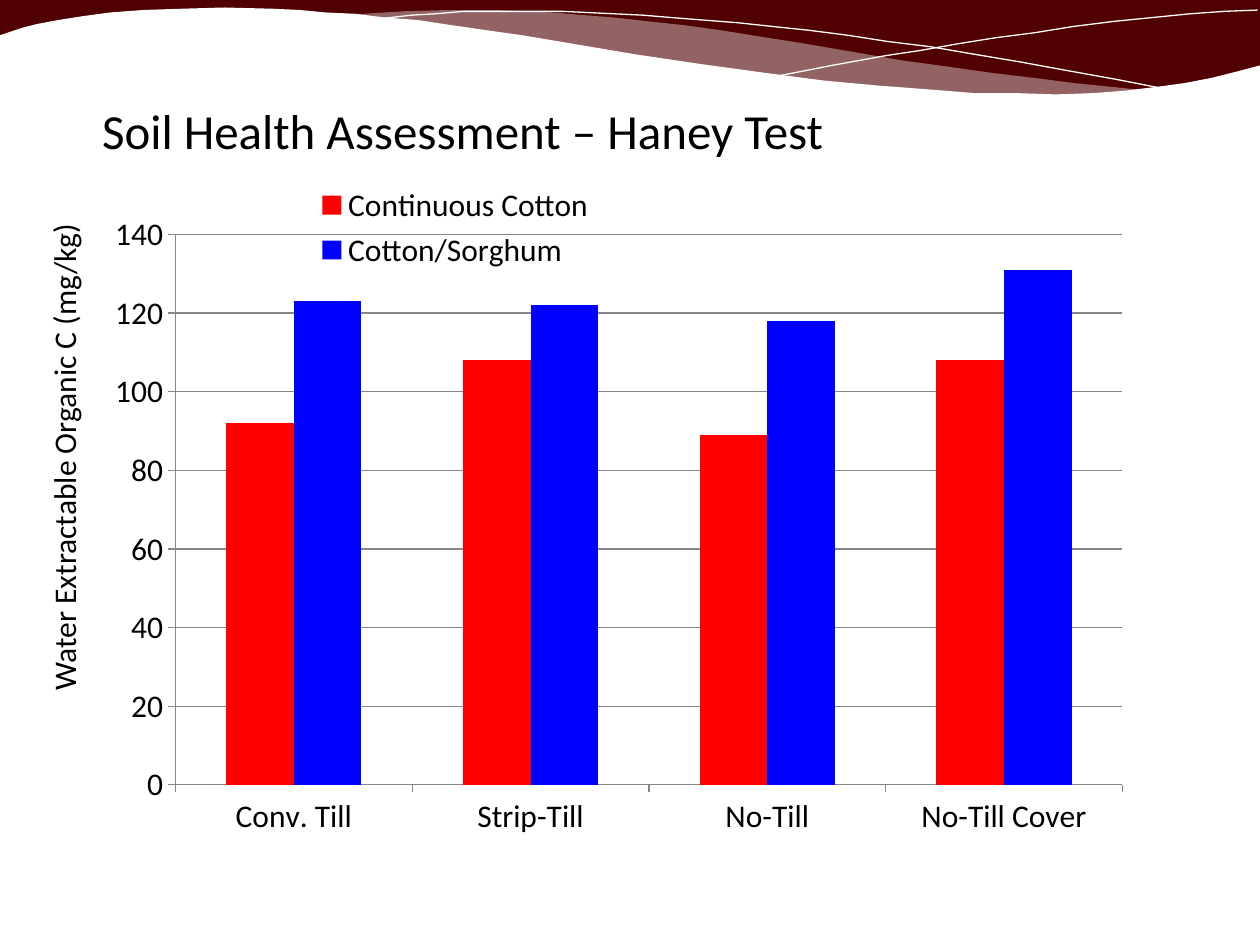
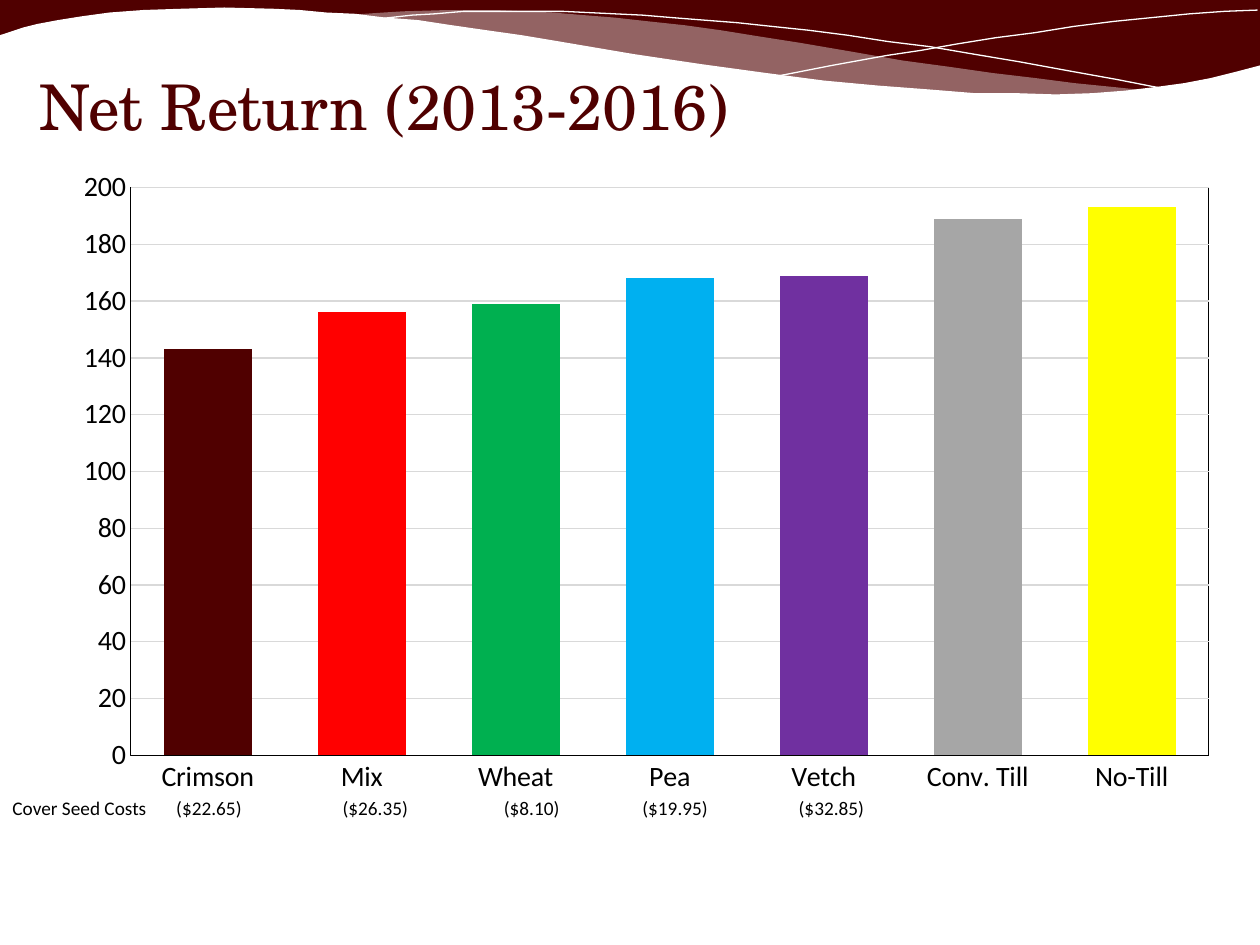
from lxml import etree
from pptx import Presentation
from pptx.chart.data import CategoryChartData
from pptx.dml.color import RGBColor
from pptx.enum.chart import XL_CHART_TYPE, XL_LEGEND_POSITION, XL_TICK_MARK
from pptx.enum.shapes import MSO_SHAPE
from pptx.enum.text import MSO_ANCHOR, PP_ALIGN
from pptx.oxml import parse_xml
from pptx.oxml.ns import nsdecls, qn
from pptx.util import Inches, Pt

CLUSTERED = XL_CHART_TYPE.COLUMN_CLUSTERED
LEGEND_RIGHT = XL_LEGEND_POSITION.RIGHT
TICK_NONE, TICK_OUT = XL_TICK_MARK.NONE, XL_TICK_MARK.OUTSIDE
RECTANGLE = MSO_SHAPE.RECTANGLE
TOP, MIDDLE = MSO_ANCHOR.TOP, MSO_ANCHOR.MIDDLE
LEFT = PP_ALIGN.LEFT

MAROON, WHITE, BLACK = "500000", "FFFFFF", "000000"
VEIL, AXIS_GREY, PALE_GREY = "F8F8F8", "868686", "D9D9D9"
BODY_FONT, SERIF_FONT = "Calibri", "TeX Gyre Schola"

VEIL_OUTLINE = [
    (9.12, .72), (8.83, .69), (8.53, .66), (8.22, .62), (7.88, .58), (7.53, .53),
    (7.16, .48), (6.76, .41), (6.35, .34), (6.03, .29), (5.72, .24), (5.43, .2),
    (5.15, .17), (4.88, .14), (4.63, .12), (4.39, .1), (4.16, .09), (3.94, .08),
    (3.54, .08), (3.2, .09), (3.04, .1), (2.89, .11), (2.76, .12), (3.14, .15),
    (3.34, .18), (3.55, .2), (3.77, .23), (4, .27), (4.23, .3), (4.47, .34),
    (4.9, .42), (5.31, .48), (5.69, .54), (6.06, .59), (6.41, .63), (6.73, .67),
    (7.04, .7), (7.33, .72), (7.6, .74), (7.86, .75), (8.1, .76), (8.54, .76),
    (8.75, .75), (8.94, .73)]
FALLING_LINE = [
    (3, .15), (3.09, .14), (3.27, .12), (3.45, .11), (3.68, .09), (4.12, .09),
    (4.47, .09), (4.88, .11), (5.1, .12), (5.34, .14), (5.59, .16), (5.85, .18),
    (6.13, .21), (6.42, .24), (6.73, .28), (7.05, .33), (7.38, .37), (7.73, .43),
    (8.09, .49), (8.47, .56), (8.86, .63), (9.27, .71)]
RISING_LINE = [
    (6.19, .6), (6.6, .52), (7.04, .44), (7.31, .4), (7.59, .35), (7.9, .3),
    (8.21, .26), (8.52, .21), (8.84, .17), (9.14, .14), (9.44, .11), (9.72, .09),
    (9.98, .08)]
WAVE_OUTLINE = [
    (10, .52), (9.81, .57), (9.61, .62), (9.4, .66), (9.18, .69), (8.93, .72),
    (8.67, .74), (8.38, .75), (8.07, .74), (7.74, .74), (7.37, .71), (6.97, .68),
    (6.54, .64), (6.08, .58), (5.57, .51), (5.03, .43), (4.44, .33), (4.14, .28),
    (3.86, .24), (3.58, .2), (3.32, .16), (3.06, .14), (2.82, .11), (2.59, .1),
    (2.38, .08), (2.17, .07), (1.78, .06), (1.44, .07), (1.14, .08), (.87, .1),
    (.65, .13), (.46, .16), (.3, .19), (.18, .22), (.06, .26), (0, .28),
    (0, 1.13), (10, 1.13)]


def rgb(color):
    return RGBColor.from_string(color)


def set_font(font, size, color=BLACK, name=BODY_FONT):
    font.size, font.name = Pt(size), name
    font.color.rgb = rgb(color)


def set_line(line, color, width):
    line.color.rgb = rgb(color)
    line.width = Pt(width)


def set_layout(parent, index, place, inner=False):
    """Pin a chart part to x, y, width, height as fractions of the chart."""
    for old in parent.findall(qn("c:layout")):
        parent.remove(old)
    target = '<c:layoutTarget val="inner"/>' if inner else ""
    modes = '<c:xMode val="edge"/><c:yMode val="edge"/>'
    values = "".join(f'<c:{key} val="{value}"/>' for key, value in zip("xywh", place))
    parent.insert(index, parse_xml(
        f'<c:layout {nsdecls("c")}><c:manualLayout>{target}{modes}{values}'
        '</c:manualLayout></c:layout>'))


class SlideBuilder:
    def __init__(self):
        self.deck = Presentation()
        self.deck.slide_width, self.deck.slide_height = Inches(10), Inches(7.5)
        self.slide = None

    def add_slide(self):
        self.slide = self.deck.slides.add_slide(self.deck.slide_layouts[5])

    def finish_shape(self, shape, fill=None, line=None):
        shape.shadow.inherit = False
        if fill:
            shape.fill.solid()
            shape.fill.fore_color.rgb = rgb(fill)
        else:
            shape.fill.background()
        if line:
            set_line(shape.line, line, 0)
        else:
            shape.line.fill.background()
        return shape

    def outline(self, points, fill=None, line=None):
        corners = [(Inches(x), Inches(y)) for x, y in points]
        builder = self.slide.shapes.build_freeform(*corners[0])
        builder.add_line_segments(corners[1:], close=fill is not None)
        return self.finish_shape(builder.convert_to_shape(), fill, line)

    def wave_band(self):
        """Draw the top band and move it to the master, which all slides share."""
        band = self.slide.shapes.add_shape(RECTANGLE, 0, 0, Inches(10), Inches(1.12))
        self.finish_shape(band, MAROON)
        veil = self.outline(VEIL_OUTLINE, fill=VEIL)
        veil_color = veil._element.spPr.find(qn("a:solidFill"))[0]
        etree.SubElement(veil_color, qn("a:alpha"), val="40000")
        parts = [band, veil,
                 self.outline(FALLING_LINE, line=WHITE),
                 self.outline(RISING_LINE, line=WHITE),
                 self.outline(WAVE_OUTLINE, fill=WHITE)]
        master_tree = self.deck.slide_master.shapes._spTree
        for index, part in enumerate(parts):
            part._element.nvSpPr.cNvPr.set("id", str(100 + index))
            master_tree.insert(2 + index, part._element)

    def title(self, text, place, size, color=BLACK, font=BODY_FONT, anchor=MIDDLE):
        title = self.slide.shapes.title
        title.left, title.top, title.width, title.height = map(Inches, place)
        title.text_frame.vertical_anchor = anchor
        title.text_frame.word_wrap = True
        para = title.text_frame.paragraphs[0]
        para.text, para.alignment = text, LEFT
        set_font(para.font, size, color, font)

    def text(self, text, place, size, rotation=0, tab_stops=()):
        box = self.slide.shapes.add_textbox(*map(Inches, place))
        box.rotation = rotation
        box.text_frame.word_wrap = not rotation
        para = box.text_frame.paragraphs[0]
        para.text = text
        if tab_stops:
            tabs = etree.SubElement(para._p.get_or_add_pPr(), qn("a:tabLst"))
            for stop in tab_stops:
                etree.SubElement(tabs, qn("a:tab"), pos=str(Inches(stop)), algn="l")
        set_font(para.font, size)

    def column_chart(self, place, categories, series, plot_place, top, gap, size,
                     tick, axis_line, grid_line, overlap=0):
        """Series maps each name to its values and one colour, or a colour per point."""
        data = CategoryChartData()
        data.categories = categories
        for name, (values, _) in series.items():
            data.add_series(name, values)
        frame = self.slide.shapes.add_chart(CLUSTERED, *map(Inches, place), data)
        chart = frame.chart
        chart.has_title = chart.has_legend = False
        set_font(chart.font, size)
        plot = chart.plots[0]
        plot.gap_width, plot.overlap = gap, overlap
        plot.vary_by_categories = False
        for bars, (_, colors) in zip(plot.series, series.values()):
            if isinstance(colors, str):
                targets = [(bars, colors)]
            else:
                targets = [(bars.points[i], color) for i, color in enumerate(colors)]
            for target, color in targets:
                target.format.fill.solid()
                target.format.fill.fore_color.rgb = rgb(color)
        for axis in (chart.category_axis, chart.value_axis):
            axis.major_tick_mark, axis.minor_tick_mark = tick, TICK_NONE
            set_line(axis.format.line, axis_line, 0.75)
        chart.category_axis.has_major_gridlines = False
        value_axis = chart.value_axis
        value_axis.minimum_scale, value_axis.maximum_scale = 0, top
        value_axis.major_unit = 20
        value_axis.has_major_gridlines = True
        set_line(value_axis.major_gridlines.format.line, grid_line, 0.75)
        set_layout(chart._chartSpace.chart.plotArea, 0, plot_place, inner=True)
        return chart

    def legend(self, chart, place, size):
        chart.has_legend = True
        chart.legend.position = LEGEND_RIGHT
        chart.legend.include_in_layout = False
        set_font(chart.legend.font, size)
        set_layout(chart.legend._element, 1, place)

    def plot_frame(self, chart, color):
        chart._chartSpace.chart.plotArea.append(parse_xml(
            f'<c:spPr {nsdecls("c", "a")}><a:noFill/><a:ln w="9525"><a:solidFill>'
            f'<a:srgbClr val="{color}"/></a:solidFill></a:ln></c:spPr>'))


def soil_health_slide(builder):
    builder.title("Soil Health Assessment – Haney Test", (0.71, 0.75, 6.22, 0.57), 28,
                  anchor=TOP)
    chart = builder.column_chart(
        (0.71, 1.37, 8.54, 5.46),
        ["Conv. Till", "Strip-Till", "No-Till", "No-Till Cover"],
        {"Continuous Cotton": ([92, 108, 89, 108], "FF0000"),
         "Cotton/Sorghum": ([123, 122, 118, 131], "0000FF")},
        plot_place=(0.08, 0.09, 0.88, 0.8), top=140, gap=150, size=18,
        tick=TICK_OUT, axis_line=AXIS_GREY, grid_line=AXIS_GREY)
    builder.legend(chart, (0.2, 0.01, 0.28, 0.14), 18)
    builder.text("Water Extractable Organic C (mg/kg)", (-1.55, 3.32, 4.11, 0.4), 18,
                 rotation=270)


def net_return_slide(builder):
    builder.title("Net Return (2013-2016)", (0.21, 0.46, 9.57, 0.75), 36,
                  MAROON, SERIF_FONT)
    bar_colors = [MAROON, "FF0000", "00B050", "00B0F0", "7030A0", "A6A6A6", "FFFF00"]
    chart = builder.column_chart(
        (0.48, 1.23, 9.3, 5.18),
        ["Crimson", "Mix", "Wheat", "Pea", "Vetch", "Conv. Till", "No-Till"],
        {"Net Return": ([143, 156, 159, 168, 169, 189, 193], bar_colors)},
        plot_place=(0.06, 0.05, 0.92, 0.87), top=200, gap=75, size=16,
        tick=TICK_NONE, axis_line=BLACK, grid_line=PALE_GREY, overlap=-27)
    builder.plot_frame(chart, BLACK)
    seed_costs = ["($22.65)", "($26.35)", "($8.10)", "($19.95)", "($32.85)"]
    builder.text("\t".join(["Cover Seed Costs"] + seed_costs), (0, 6.27, 8.58, 0.29), 11,
                 tab_stops=(1.3, 2.62, 3.9, 5, 6.24))


def main():
    builder = SlideBuilder()
    builder.add_slide()
    builder.wave_band()
    soil_health_slide(builder)
    builder.add_slide()
    net_return_slide(builder)
    builder.deck.save("out.pptx")


if __name__ == "__main__":
    main()
